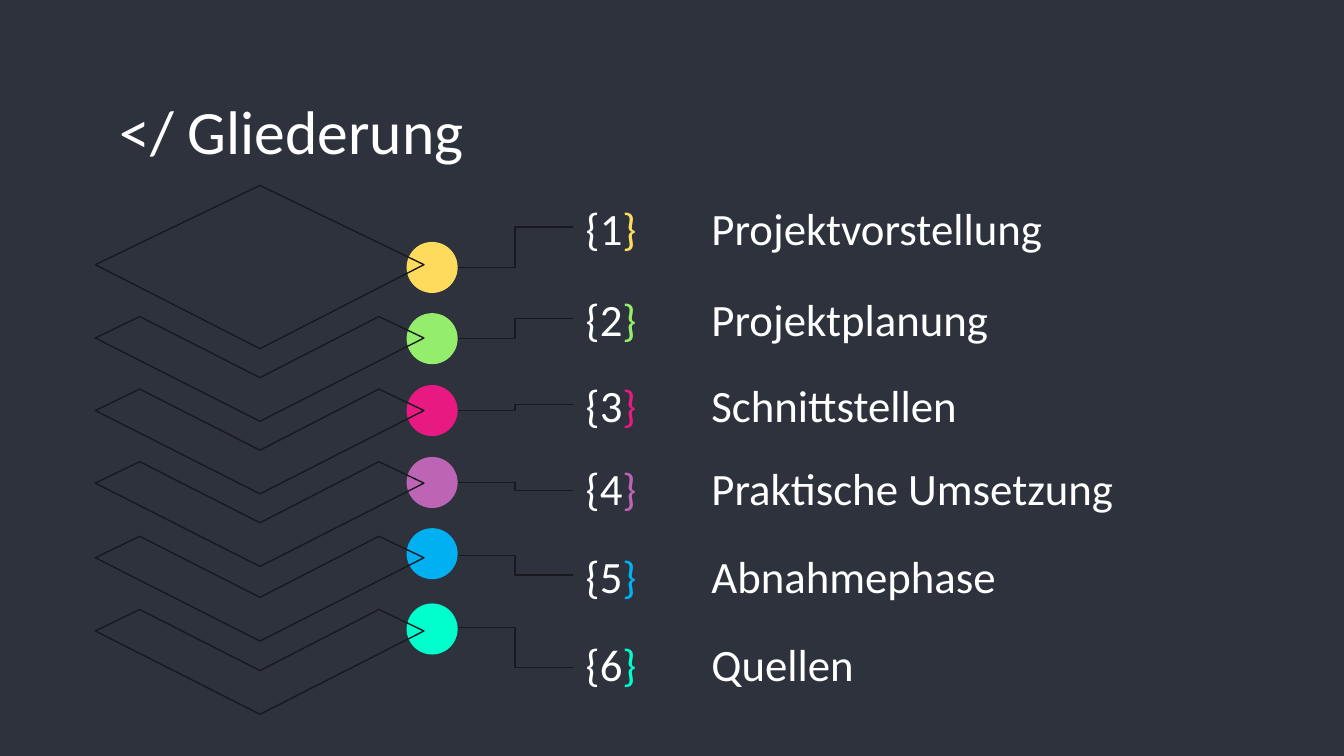
from pptx import Presentation
from pptx.dml.color import RGBColor
from pptx.enum.shapes import MSO_CONNECTOR, MSO_SHAPE
from pptx.enum.text import MSO_ANCHOR, PP_ALIGN
from pptx.oxml.ns import qn
from pptx.util import Pt
from lxml.etree import SubElement

PX = 4572  # EMU in one px, 200 px to the inch
COLORS = {
    "background": "2D323C", "text": "FFFFFF", "line": "16191E",
    "yellow": "FFDB5D", "green": "94EE6B", "pink": "E81981",
    "purple": "BD64B5", "blue": "00B0F0", "mint": "00FFCC",
}
# topic, accent, top of the text row, top of the dot, elbow heights at dot and number
TOPICS = [
    ("Projektvorstellung", "yellow", 289, 360, 398, 338),
    ("Projektplanung", "green", 424, 466, 504, 474),
    ("Schnittstellen", "pink", 552, 573, 611, 602),
    ("Praktische Umsetzung", "purple", 676, 680, 718, 730),
    ("Abnahmephase", "blue", 807, 786, 827, 856),
    ("Quellen", "mint", 938, 898, 934, 993),
]
ROW_H, DOT = 100, 76
DOT_X, NUMBER_X, TOPIC_X = 605, 852, 1039
DIAMOND = [(387, 276), (142, 394), (387, 519), (631, 394)]
CHEVRON = [(208, 0), (142, 32), (387, 156), (631, 32), (564, 0), (387, 91)]
CHEVRON_TOPS = [471, 579, 687, 798, 907]


def rgb(name):
    return RGBColor.from_string(COLORS[name])


def write(s, parts, size, anchor):
    """Fill a text shape with one left-aligned line of (text, colour) parts."""
    tf = s.text_frame
    tf.word_wrap = True
    tf.vertical_anchor = anchor
    tf.margin_left = tf.margin_right = tf.margin_top = tf.margin_bottom = 20 * PX
    p = tf.paragraphs[0]
    p.alignment = PP_ALIGN.LEFT
    for text, color in parts:
        r = p.add_run()
        r.text = text
        r.font.name = "Calibri"
        r.font.size = Pt(size)
        r.font.color.rgb = rgb(color)


prs = Presentation()
prs.slide_width, prs.slide_height = 2000 * PX, 1125 * PX
slide = prs.slides.add_slide(prs.slide_layouts[5])
slide.background.fill.solid()
slide.background.fill.fore_color.rgb = rgb("background")
shapes = slide.shapes

title = shapes.title
title.left, title.top, title.width, title.height = 158 * PX, 118 * PX, 1686 * PX, 126 * PX
write(title, [("</ Gliederung", "text")], 33, MSO_ANCHOR.TOP)

# Topics, each with its number, dot and elbow line
for i, (topic, accent, top, dot_top, dot_y, number_y) in enumerate(TOPICS, 1):
    sp = shapes.add_textbox(TOPIC_X * PX, top * PX, 878 * PX, ROW_H * PX)
    write(sp, [(topic, "text")], 24, MSO_ANCHOR.MIDDLE)
    sp = shapes.add_textbox(NUMBER_X * PX, top * PX, 168 * PX, ROW_H * PX)
    write(sp, [(f"{{{i}", "text"), ("}", accent)], 24, MSO_ANCHOR.MIDDLE)

    dot = shapes.add_shape(MSO_SHAPE.OVAL, DOT_X * PX, dot_top * PX, DOT * PX, DOT * PX)
    dot.shadow.inherit = False
    dot.fill.solid()
    dot.fill.fore_color.rgb = rgb(accent)
    dot.line.fill.background()

    elbow = shapes.add_connector(
        MSO_CONNECTOR.ELBOW, (DOT_X + DOT) * PX, dot_y * PX, NUMBER_X * PX, number_y * PX)
    elbow.line.color.rgb = rgb("line")
    elbow.line.width = Pt(0.75)
    SubElement(elbow._element.spPr, qn("a:effectLst"))

# Stack of layers: a whole diamond above five chevrons
layers = [DIAMOND] + [[(x, top + y) for x, y in CHEVRON] for top in CHEVRON_TOPS]
for points in layers:
    fb = shapes.build_freeform(*points[0], scale=PX)
    fb.add_line_segments(points[1:], close=True)
    layer = fb.convert_to_shape()
    layer.shadow.inherit = False
    layer.fill.background()
    layer.line.color.rgb = rgb("line")
    layer.line.width = Pt(0.75)

prs.save("out.pptx")
